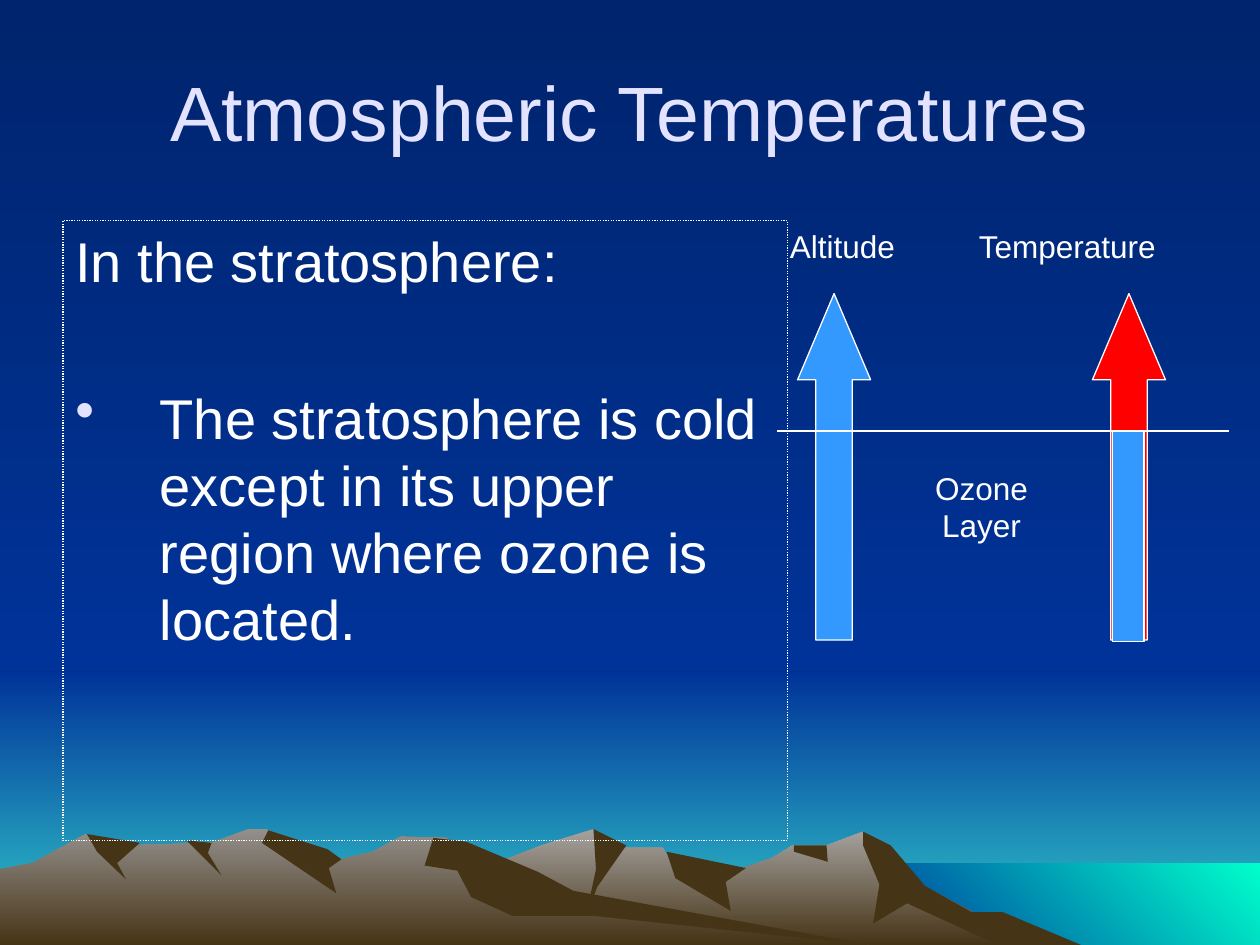
"""Build the Atmospheric Temperatures slide with its mountain scenery."""
from lxml import etree
from pptx import Presentation
from pptx.dml.color import RGBColor
from pptx.enum.dml import MSO_LINE
from pptx.enum.shapes import MSO_CONNECTOR, MSO_SHAPE
from pptx.enum.text import MSO_ANCHOR, PP_ALIGN
from pptx.oxml.ns import qn
from pptx.util import Pt

PX = 9144
RECTANGLE, UP_ARROW = MSO_SHAPE.RECTANGLE, MSO_SHAPE.UP_ARROW
STRAIGHT, DOTTED = MSO_CONNECTOR.STRAIGHT, MSO_LINE.ROUND_DOT
LEFT, CENTER = PP_ALIGN.LEFT, PP_ALIGN.CENTER
TOP, MIDDLE = MSO_ANCHOR.TOP, MSO_ANCHOR.MIDDLE

FONT = "Arial"
TITLE_ONLY = 5
WIDTH, HEIGHT = 1000, 750
HORIZON, SHORE = 533, 685
COLORS = {
    "night": "00246D", "blue": "003399", "teal": "33CCCC", "aqua": "00FFCC",
    "near rock": "A5A29F", "far rock": "938F8B", "shade": "463416",
    "title": "E3E3FF", "white": "FFFFFF", "cold": "3399FF", "warm": "FF0000",
}
SKY = ("night", "blue", 270)

BANDS = [
    ((0, HORIZON, WIDTH, HEIGHT - HORIZON), ("blue", "teal", 270)),
    ((0, 0, WIDTH, HORIZON), SKY),
    ((683, SHORE, WIDTH - 683, HEIGHT - SHORE), ("blue", "aqua", 45)),
]

MOUNTAINS = [
    (("near rock", "shade", 270), [
        (258, HEIGHT), (327, 709), (394, 685), (430, 671), (471, 658), (486, 673), (526, 673),
        (536, 690), (566, 697), (613, 681), (629, 671), (656, 671), (685, 660), (723, 698),
        (821, HEIGHT)]),
    ("shade", [
        (685, 660), (707, 671), (734, 703), (771, 724), (796, 724), (858, HEIGHT),
        (792, HEIGHT), (720, 717), (693, 733), (698, 702), (685, 671)]),
    ("shade", [(471, 658), (497, 671), (474, 704), (465, 727), (473, 690)]),
    ("shade", [(529, 676), (592, 689), (576, 700), (580, 723), (536, 697)]),
    ("shade", [(630, 671), (656, 671), (657, 684), (630, 676)]),
    (("far rock", "shade", 270), [
        (0, HEIGHT), (0, 690), (26, 685), (68, 662), (94, 671), (168, 669), (197, 658),
        (212, 658), (236, 681), (260, 676), (271, 682), (296, 676), (318, 664), (354, 665),
        (432, 712), (690, HEIGHT)]),
    ("shade", [(213, 659), (260, 674), (271, 682), (261, 689), (267, 709), (208, 669)]),
    ("shade", [
        (344, 665), (370, 668), (427, 692), (455, 707), (690, HEIGHT), (472, 727),
        (407, 727), (374, 712), (363, 691), (337, 687)]),
    ("shade", [(148, 667), (168, 669), (165, 677), (176, 695)]),
    ("shade", [(69, 662), (111, 669), (93, 685), (100, 698), (77, 676)]),
]

TITLE = "Atmospheric Temperatures"
BODY = [
    {"text": "In the stratosphere:"},
    {"text": "The stratosphere is cold except in its upper region where ozone is located.",
     "bullet": "•", "space_before": 51},
]
LABELS = [
    ("Altitude\t\tTemperature", (617, 175, 408, 40), LEFT),
    ("Ozone Layer", (700, 367, 158, 70), CENTER),
]
ARROWS = [(633, "cold"), (867, "warm")]
ARROW_TOP, ARROW_WIDTH, ARROW_HEIGHT = 233, 58, 275
OZONE_LINE = (617, 342, 975, 342)
COLD_PART = (883, 342, 25, 167)


def emu(lengths):
    return [length * PX for length in lengths]


def color(name):
    return RGBColor.from_string(COLORS[name])


def paint(fill, colors):
    if isinstance(colors, str):
        fill.solid()
        fill.fore_color.rgb = color(colors)
        return
    *names, angle = colors
    fill.gradient()
    fill.gradient_angle = angle
    for stop, name in zip(fill.gradient_stops, names):
        stop.color.rgb = color(name)


def outline(line, dash=None):
    line.color.rgb = color("white")
    line.width = Pt(0.75)
    if dash:
        line.dash_style = dash


def style(shape, fill, lined=False):
    shape.shadow.inherit = False
    paint(shape.fill, fill)
    if lined:
        outline(shape.line)
    else:
        shape.line.fill.background()


def add_preset(slide, kind, box, fill, lined=False):
    shape = slide.shapes.add_shape(kind, *emu(box))
    style(shape, fill, lined)
    return shape


def write(paragraph, text, size=18, ink="white", align=LEFT, hanging=0, bullet=None, space_before=0):
    run = paragraph.add_run()
    run.text = text
    run.font.name, run.font.size = FONT, Pt(size)
    run.font.color.rgb = color(ink)
    paragraph.alignment = align
    paragraph.space_before = Pt(space_before)
    properties = paragraph._p.get_or_add_pPr()
    if hanging:
        properties.set("marL", str(hanging * PX))
        properties.set("indent", str(-hanging * PX))
    if bullet:
        bullet_color = etree.SubElement(properties, qn("a:buClr"))
        etree.SubElement(bullet_color, qn("a:srgbClr"), val=COLORS["title"])
        etree.SubElement(properties, qn("a:buChar"), char=bullet)


def add_text_box(slide, box):
    shape = slide.shapes.add_textbox(*emu(box))
    shape.text_frame.word_wrap = True
    shape.text_frame.vertical_anchor = TOP
    return shape


def add_scenery(slide):
    paint(slide.background.fill, SKY)
    for box, fill in BANDS:
        add_preset(slide, RECTANGLE, box, fill)
    for fill, points in MOUNTAINS:
        builder = slide.shapes.build_freeform(*points[0], scale=PX)
        builder.add_line_segments(points[1:], close=True)
        style(builder.convert_to_shape(), fill)


def add_words(slide):
    title = slide.shapes.title
    title.left, title.top, title.width, title.height = emu((50, 25, 900, 125))
    title.text_frame.vertical_anchor = MIDDLE
    write(title.text_frame.paragraphs[0], TITLE, size=44, ink="title", align=CENTER)
    slide.shapes.element.append(title.element)

    body = add_text_box(slide, (50, 175, 575, 492))
    outline(body.line, DOTTED)
    frame = body.text_frame
    for index, item in enumerate(BODY):
        paragraph = frame.add_paragraph() if index else frame.paragraphs[0]
        write(paragraph, size=32, hanging=67, **item)
    for text, box, align in LABELS:
        write(add_text_box(slide, box).text_frame.paragraphs[0], text, align=align)


def add_diagram(slide):
    for left, fill in ARROWS:
        box = (left, ARROW_TOP, ARROW_WIDTH, ARROW_HEIGHT)
        arrow = add_preset(slide, UP_ARROW, box, fill, lined=True)
        arrow.adjustments[0], arrow.adjustments[1] = 0.5, 1.18
    connector = slide.shapes.add_connector(STRAIGHT, *emu(OZONE_LINE))
    outline(connector.line)
    etree.SubElement(connector.element.spPr, qn("a:effectLst"))
    add_preset(slide, RECTANGLE, COLD_PART, "cold", lined=True)


def main():
    presentation = Presentation()
    presentation.slide_width, presentation.slide_height = emu((WIDTH, HEIGHT))
    slide = presentation.slides.add_slide(presentation.slide_layouts[TITLE_ONLY])
    add_scenery(slide)
    add_words(slide)
    add_diagram(slide)
    presentation.save("out.pptx")


if __name__ == "__main__":
    main()
